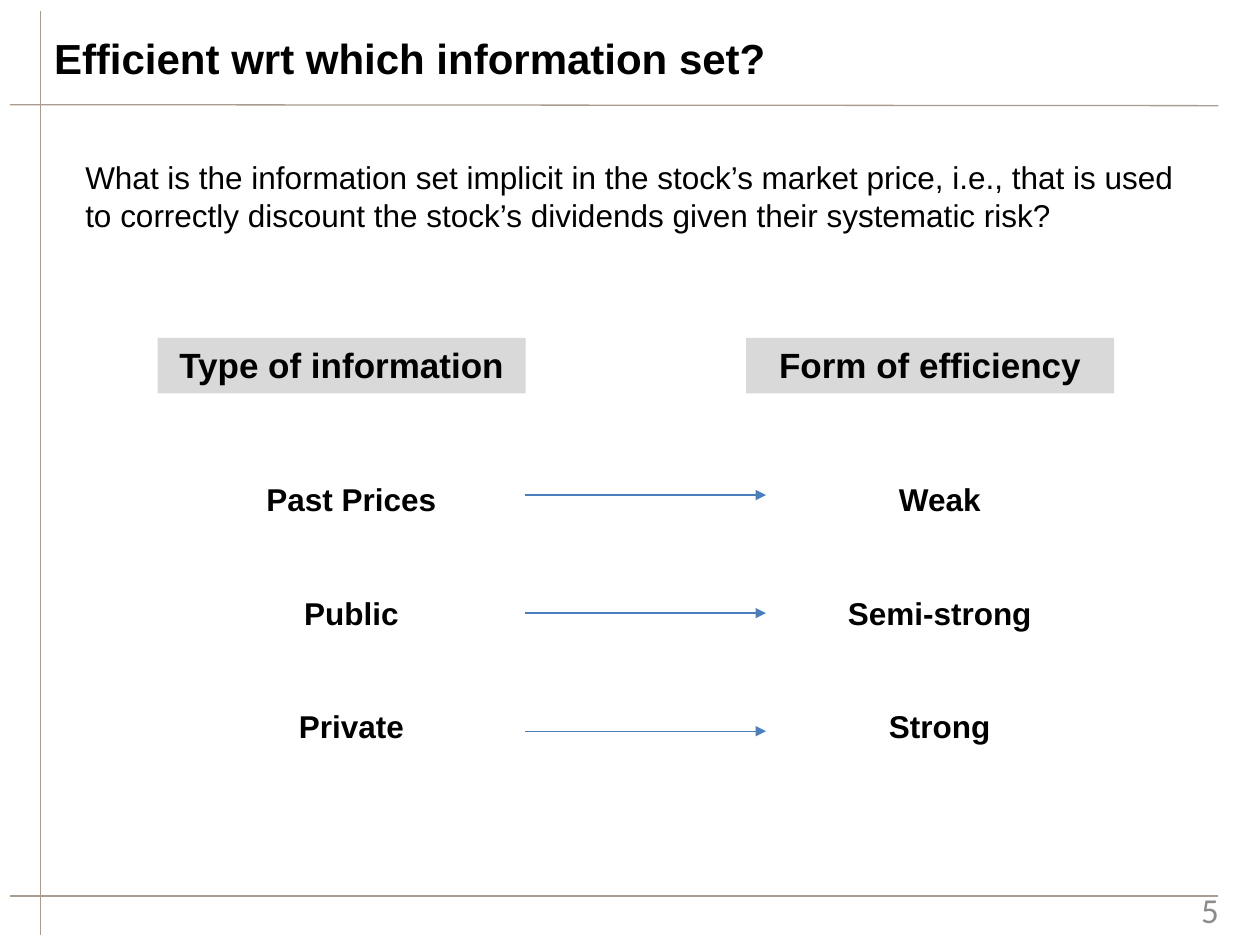
from pptx import Presentation
from pptx.dml.color import RGBColor
from pptx.enum.shapes import MSO_CONNECTOR, MSO_SHAPE
from pptx.enum.text import MSO_ANCHOR as Anchor, PP_ALIGN as Align
from pptx.oxml.ns import qn
from pptx.util import Cm, Pt
from lxml.etree import SubElement

COLORS = {
    "text": "000000",
    "page_number": "8C8C8C",
    "rule": "AA9C8F",
    "arrow": "4B7EBC",
    "heading": "D9D9D9",
}


def color(name):
    return RGBColor.from_string(COLORS[name])


def write(frame, *paragraphs, size=18, bold=False, font="Arial", ink="text",
          align=Align.LEFT, anchor=Anchor.TOP, gap=0):
    """Fill a text frame; gap is the space in points between paragraphs."""
    frame.word_wrap = True
    frame.vertical_anchor = anchor
    for index, wording in enumerate(paragraphs):
        paragraph = frame.add_paragraph() if index else frame.paragraphs[0]
        paragraph.alignment = align
        if index and gap:
            paragraph.space_before = Pt(gap)
        run = paragraph.add_run()
        run.text = wording
        run.font.name = font
        run.font.size = Pt(size)
        run.font.bold = bold
        run.font.color.rgb = color(ink)


class SlideBuilder:
    line_width = Pt(0.75)

    def __init__(self, slide):
        self.shapes = slide.shapes

    def text(self, left, top, width, height, *paragraphs, **style):
        box = self.shapes.add_textbox(Cm(left), Cm(top), Cm(width), Cm(height))
        write(box.text_frame, *paragraphs, **style)

    def heading(self, left, top, width, height, wording):
        bar = self.shapes.add_shape(MSO_SHAPE.RECTANGLE, Cm(left), Cm(top),
                                    Cm(width), Cm(height))
        bar.shadow.inherit = False
        bar.fill.solid()
        bar.fill.fore_color.rgb = color("heading")
        bar.line.fill.background()
        write(bar.text_frame, wording, size=20, bold=True, align=Align.CENTER)

    def line(self, x1, y1, x2, y2, ink="rule"):
        connector = self.shapes.add_connector(
            MSO_CONNECTOR.STRAIGHT, Cm(x1), Cm(y1), Cm(x2), Cm(y2))
        connector.line.color.rgb = color(ink)
        connector.line.width = self.line_width
        SubElement(connector._element.spPr, qn("a:effectLst"))
        return connector

    def arrow(self, x1, y1, x2, y2):
        connector = self.line(x1, y1, x2, y2, ink="arrow")
        SubElement(connector.line._get_or_add_ln(), qn("a:tailEnd"), type="triangle")


def main():
    presentation = Presentation()
    presentation.slide_width = Cm(25.4)
    presentation.slide_height = Cm(19.05)
    builder = SlideBuilder(presentation.slides.add_slide(presentation.slide_layouts[6]))

    builder.line(0.81, 0.23, 0.81, 18.85)
    builder.line(0.2, 2.11, 24.56, 2.13)
    builder.line(0.2, 18.06, 24.56, 18.06)
    builder.text(18.9, 17.98, 5.92, 0.69, "5", size=20, font="Calibri",
                 ink="page_number", align=Align.RIGHT, anchor=Anchor.MIDDLE)
    builder.text(0.84, 0.53, 20.62, 1.27, "Efficient wrt which information set?",
                 size=24, bold=True)
    builder.text(1.47, 3.07, 23.06, 1.8,
                 "What is the information set implicit in the stock’s market price, "
                 "i.e., that is used to correctly discount the stock’s dividends "
                 "given their systematic risk?")

    columns = [
        (3.18, 3.81, "Type of information", ("Past Prices", "Public", "Private")),
        (15.04, 15.67, "Form of efficiency", ("Weak", "Semi-strong", "Strong")),
    ]
    for heading_left, list_left, heading, entries in columns:
        builder.heading(heading_left, 6.81, 7.42, 1.12, heading)
        builder.text(list_left, 9.55, 6.55, 5.64, *entries, bold=True,
                     align=Align.CENTER, gap=43.4)

    for row in range(len(entries)):
        arrow_y = 9.98 + 2.38 * row
        builder.arrow(10.59, arrow_y, 15.44, arrow_y)

    presentation.save("out.pptx")


if __name__ == "__main__":
    main()
